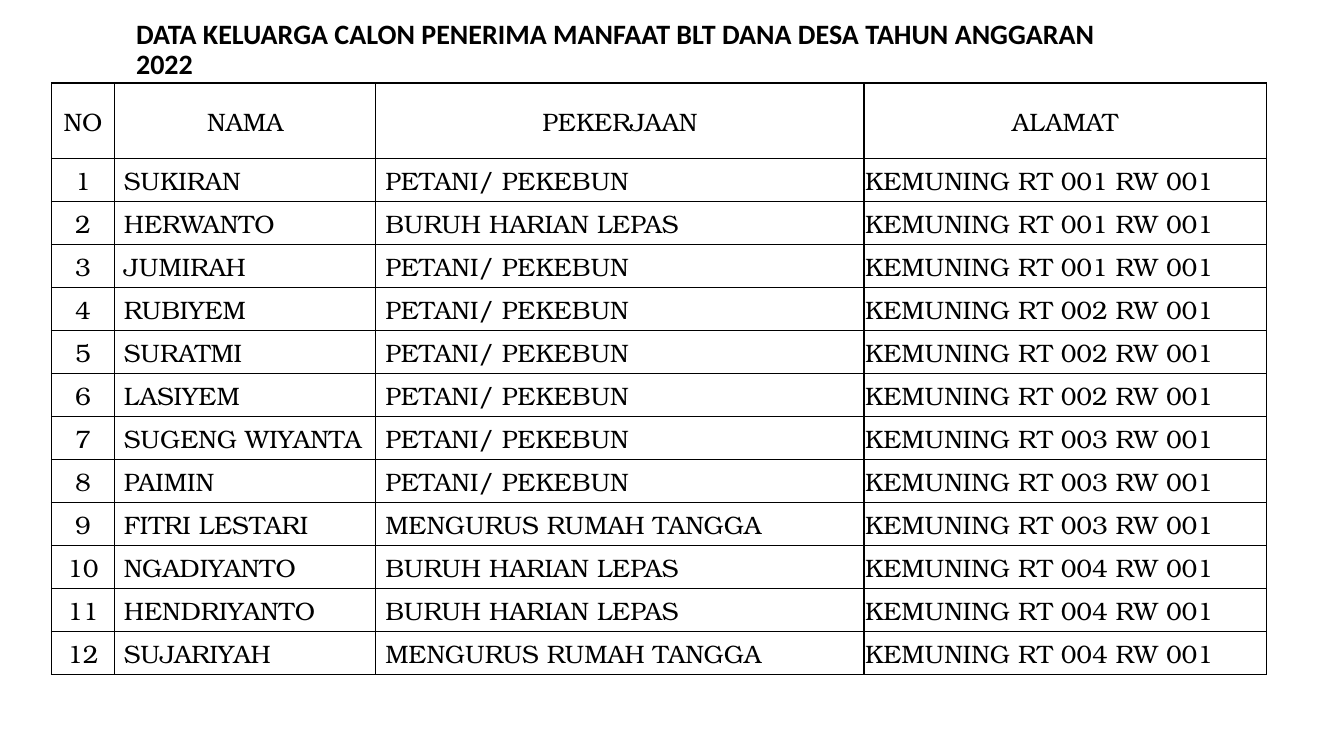
from dataclasses import dataclass

from lxml import etree
from pptx import Presentation
from pptx.dml.color import RGBColor
from pptx.enum.text import MSO_ANCHOR, MSO_AUTO_SIZE, PP_ALIGN
from pptx.oxml.ns import qn
from pptx.util import Emu, Pt

LEFT, CENTER = PP_ALIGN.LEFT, PP_ALIGN.CENTER
MIDDLE = MSO_ANCHOR.MIDDLE
NO_AUTOFIT = MSO_AUTO_SIZE.NONE
TITLE_ONLY = 5


@dataclass(frozen=True)
class Theme:
    ink: str = "000000"
    title_font: str = "Calibri"
    table_font: str = "TeX Gyre Bonum"
    title_size: int = 20
    table_size: int = 18
    border: int = 1


THEME = Theme()

TITLE = "DATA KELUARGA CALON PENERIMA MANFAAT BLT DANA DESA TAHUN ANGGARAN 2022"
HEADERS = ("NO", "NAMA", "PEKERJAAN", "ALAMAT")
COLUMN_WIDTHS = (60, 249, 465, 383)
COLUMN_INDENTS = (1, 9, 9, 1)
HEADER_HEIGHT, ROW_HEIGHT = 72, 41

FARMER = "PETANI/ PEKEBUN"
LABOURER = "BURUH HARIAN LEPAS"
HOUSEKEEPER = "MENGURUS RUMAH TANGGA"

# Name, occupation, RT number
RECIPIENTS = (
    ("SUKIRAN", FARMER, 1),
    ("HERWANTO", LABOURER, 1),
    ("JUMIRAH", FARMER, 1),
    ("RUBIYEM", FARMER, 2),
    ("SURATMI", FARMER, 2),
    ("LASIYEM", FARMER, 2),
    ("SUGENG WIYANTA", FARMER, 3),
    ("PAIMIN", FARMER, 3),
    ("FITRI LESTARI", HOUSEKEEPER, 3),
    ("NGADIYANTO", LABOURER, 4),
    ("HENDRIYANTO", LABOURER, 4),
    ("SUJARIYAH", HOUSEKEEPER, 4),
)


def px(n):
    """Turn pixels, 96 to the inch, into EMU."""
    return Emu(n * 9525)


def add_run(p, text, font, size, bold=False):
    r = p.add_run()
    r.text = text
    r.font.name = font
    r.font.size = Pt(size)
    r.font.bold = bold
    r.font.color.rgb = RGBColor.from_string(THEME.ink)


def set_title(s, text, left, top, width, height):
    sp = s.shapes.title
    sp.left, sp.top, sp.width, sp.height = map(px, (left, top, width, height))
    tf = sp.text_frame
    tf.word_wrap = True
    tf.auto_size = NO_AUTOFIT
    tf.vertical_anchor = MIDDLE
    p = tf.paragraphs[0]
    p.alignment = LEFT
    p.line_spacing = 0.9
    add_run(p, text, THEME.title_font, THEME.title_size, bold=True)


def add_borders(cell):
    tcPr = cell._tc.get_or_add_tcPr()
    for side in ("a:lnL", "a:lnR", "a:lnT", "a:lnB"):
        ln = etree.SubElement(tcPr, qn(side), w=str(Pt(THEME.border)))
        fill = etree.SubElement(ln, qn("a:solidFill"))
        etree.SubElement(fill, qn("a:srgbClr"), val=THEME.ink)


def fill_cell(cell, text, align, indent):
    add_borders(cell)
    cell.fill.background()
    cell.vertical_anchor = MIDDLE
    cell.margin_left = px(indent)
    cell.margin_right = cell.margin_top = px(1)
    cell.margin_bottom = 0
    p = cell.text_frame.paragraphs[0]
    p.alignment = align
    add_run(p, text, THEME.table_font, THEME.table_size)


def add_recipient_table(s, left, top):
    rows = [HEADERS]
    for no, (name, job, rt) in enumerate(RECIPIENTS, 1):
        rows.append((str(no), name, job, f"KEMUNING RT {rt:03} RW 001"))
    heights = [HEADER_HEIGHT] + [ROW_HEIGHT] * len(RECIPIENTS)

    frame = s.shapes.add_table(len(rows), len(HEADERS), px(left), px(top),
                               px(sum(COLUMN_WIDTHS)), px(sum(heights)))
    table = frame.table
    table.first_row = table.horz_banding = False
    for column, width in zip(table.columns, COLUMN_WIDTHS):
        column.width = px(width)
    for i, (values, height) in enumerate(zip(rows, heights)):
        table.rows[i].height = px(height)
        for j, text in enumerate(values):
            centred = i == 0 or j == 0
            fill_cell(table.cell(i, j), text, CENTER if centred else LEFT,
                      1 if centred else COLUMN_INDENTS[j])


def main():
    prs = Presentation()
    prs.slide_width, prs.slide_height = px(1280), px(720)
    s = prs.slides.add_slide(prs.slide_layouts[TITLE_ONLY])
    set_title(s, TITLE, 120, 19, 939, 58)
    add_recipient_table(s, 49, 79)
    prs.save("out.pptx")


if __name__ == "__main__":
    main()
